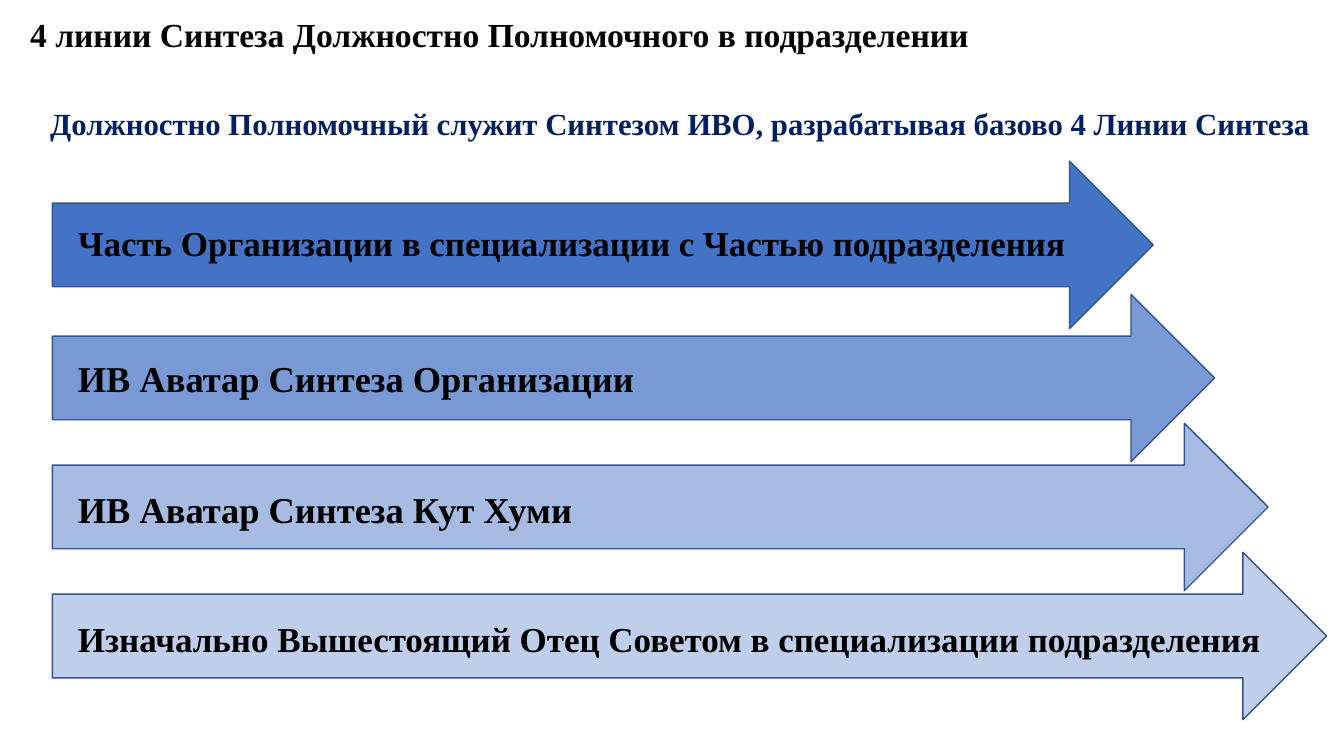
from lxml.etree import SubElement
from pptx import Presentation
from pptx.dml.color import RGBColor
from pptx.enum.shapes import MSO_SHAPE
from pptx.enum.text import MSO_AUTO_SIZE
from pptx.oxml.ns import qn
from pptx.util import Inches, Pt

COLORS = {"arrow": "4472C4", "outline": "325491", "text": "000000", "subtitle": "002060"}
FONT = "Times New Roman"

# Grid of square cells, a tenth of an inch each
CELL = Inches(0.1)
COLUMNS, ROWS = 133.33, 75
ARROW_LEFT, ARROW_HEIGHT = 5.2, 16.6

# Arrow top, arrow width, opacity in percent, label, label top, label width, label size
LINES = [
    (16, 109.2, 100, "Часть Организации в специализации с Частью подразделения", 21.5, 107.7, 25),
    (29.2, 115.3, 72, "ИВ Аватар Синтеза Организации", 34.8, 97, 26),
    (42, 120.6, 47, "ИВ Аватар Синтеза Кут Хуми", 47.8, 97, 26),
    (54.8, 126.4, 34, "Изначально Вышестоящий Отец Советом в специализации подразделения",
     60.8, 122.9, 25),
]


def cells(*counts):
    return [round(count * CELL) for count in counts]


def add_text(page, text, *, left, top, width, height=5.2, size=25, color="text"):
    box = page.shapes.add_textbox(*cells(left, top, width, height))
    frame = box.text_frame
    frame.word_wrap = True
    frame.auto_size = MSO_AUTO_SIZE.SHAPE_TO_FIT_TEXT
    span = frame.paragraphs[0].add_run()
    span.text = text
    span.font.name = FONT
    span.font.size = Pt(size)
    span.font.bold = True
    span.font.color.rgb = RGBColor.from_string(COLORS[color])


def add_arrow(page, top, width, opacity):
    arrow = page.shapes.add_shape(
        MSO_SHAPE.RIGHT_ARROW, *cells(ARROW_LEFT, top, width, ARROW_HEIGHT))
    arrow.shadow.inherit = False
    arrow.fill.solid()
    arrow.fill.fore_color.rgb = RGBColor.from_string(COLORS["arrow"])
    arrow.line.color.rgb = RGBColor.from_string(COLORS["outline"])
    arrow.line.width = Pt(1)
    if opacity < 100:
        fill_color = arrow.fill._xPr.find(qn("a:solidFill"))[0]
        SubElement(fill_color, qn("a:alpha"), val=str(opacity * 1000))


def main():
    deck = Presentation()
    deck.slide_width, deck.slide_height = cells(COLUMNS, ROWS)
    page = deck.slides.add_slide(deck.slide_layouts[6])

    # Headings
    add_text(page, "4 линии Синтеза Должностно Полномочного в подразделении",
             left=2, top=0.9, width=131.3, height=5, size=24)
    add_text(page, "Должностно Полномочный служит Синтезом ИВО, разрабатывая базово 4 Линии Синтеза",
             left=4, top=9.9, width=128.4, height=4.7, size=22, color="subtitle")

    # Arrows, each longer and paler than the one above, then their labels
    for top, width, opacity, *_ in LINES:
        add_arrow(page, top, width, opacity)
    for *_, label, label_top, label_width, size in LINES:
        add_text(page, label, left=6.75, top=label_top, width=label_width, size=size)

    deck.save("out.pptx")


if __name__ == "__main__":
    main()
